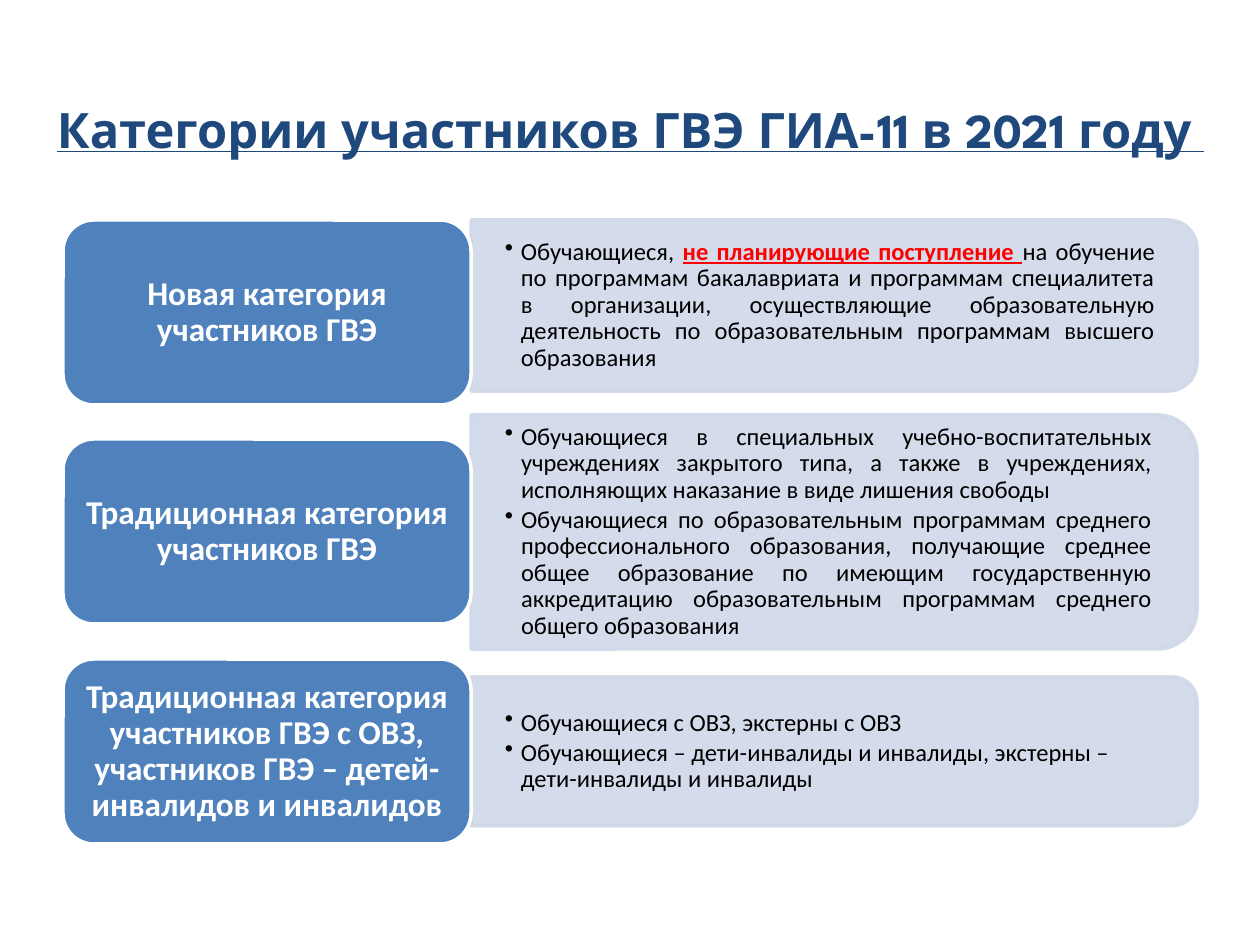
from lxml.etree import SubElement
from pptx import Presentation
from pptx.dml.color import RGBColor
from pptx.enum.shapes import MSO_SHAPE
from pptx.enum.text import MSO_ANCHOR, MSO_AUTO_SIZE, PP_ALIGN
from pptx.oxml.ns import qn
from pptx.util import Emu, Pt

NAVY = RGBColor(0x1F, 0x49, 0x7D)
BLUE = RGBColor(0x4F, 0x81, 0xBD)
PALE = RGBColor(0xD0, 0xD8, 0xE8)
WHITE = RGBColor(0xFF, 0xFF, 0xFF)
BLACK = RGBColor(0x00, 0x00, 0x00)
RED = RGBColor(0xFF, 0x00, 0x00)

TITLE_FONT = {"name": "League Spartan", "size": Pt(27.9), "underline": True}
LABEL_FONT = {"name": "Calibri", "size": Pt(19), "bold": True}
PLAIN = {"name": "Calibri", "size": Pt(14), "bold": False}
STRONG = PLAIN | {"bold": True, "underline": True}

LABEL_LEFT, LABEL_TOP, LABEL_WIDTH, LABEL_HEIGHT = 63, 220, 408, 185
TWO_ROW_PITCH = 439
PANEL_LEFT, PANEL_WIDTH = 471, 726

CATEGORIES = [
    ("Новая категория участников ГВЭ", 220, 171, PP_ALIGN.JUSTIFY, [
        [("Обучающиеся, ", PLAIN, BLACK),
         ("не планирующие поступление ", STRONG, RED),
         ("на обучение по программам бакалавриата и программам специалитета в организации, "
          "осуществляющие образовательную деятельность по образовательным программам "
          "высшего образования", PLAIN, BLACK)],
    ]),
    ("Традиционная категория участников ГВЭ", 415, 234, PP_ALIGN.JUSTIFY, [
        [("Обучающиеся в специальных учебно-воспитательных учреждениях закрытого типа, "
          "а также в учреждениях, исполняющих наказание в виде лишения свободы", PLAIN, BLACK)],
        [("Обучающиеся по образовательным программам среднего профессионального образования, "
          "получающие среднее общее образование по имеющим государственную аккредитацию "
          "образовательным программам среднего общего образования", PLAIN, BLACK)],
    ]),
    ("Традиционная категория участников ГВЭ с ОВЗ, участников ГВЭ – детей-инвалидов и инвалидов",
     677, 149, PP_ALIGN.LEFT, [
         [("Обучающиеся с ОВЗ, экстерны с ОВЗ", PLAIN, BLACK)],
         [("Обучающиеся – дети-инвалиды и инвалиды, экстерны – дети-инвалиды и инвалиды",
           PLAIN, BLACK)],
     ]),
]


def px(length):
    """Turn pixels into EMU."""
    return Emu(round(length * 914400 / 126))


def set_values(target, values):
    """Set attributes of an object from a dict."""
    for name, value in values.items():
        setattr(target, name, value)


def set_frame(text_frame, horizontal, vertical, anchor=MSO_ANCHOR.MIDDLE):
    """Set the margins, wrapping and anchor of a text frame."""
    set_values(text_frame, {
        "margin_left": px(horizontal), "margin_right": px(horizontal),
        "margin_top": px(vertical), "margin_bottom": px(vertical),
        "word_wrap": True, "auto_size": MSO_AUTO_SIZE.NONE, "vertical_anchor": anchor})


def add_run(paragraph, text, font_values, color):
    """Append a formatted run to a paragraph."""
    run = paragraph.add_run()
    run.text = text
    set_values(run.font, font_values)
    run.font.color.rgb = color


def add_block(slide, kind, box, fill_color, line_color):
    """Add a filled and outlined preset shape without a shadow."""
    shape = slide.shapes.add_shape(kind, *map(px, box))
    shape.shadow.inherit = False
    shape.fill.solid()
    shape.fill.fore_color.rgb = fill_color
    shape.line.color.rgb = line_color
    shape.line.width = Pt(2)
    return shape


def add_title(slide):
    """Place and fill the title placeholder."""
    title = slide.shapes.title
    set_values(title, {"left": px(44), "top": px(37), "width": px(1191), "height": px(110)})
    set_frame(title.text_frame, 13, 6, MSO_ANCHOR.TOP)
    title.text_frame.margin_top = px(63)
    paragraph = title.text_frame.paragraphs[0]
    paragraph.alignment = PP_ALIGN.LEFT
    heading = "Категории участников ГВЭ ГИА-11 в 2021 году"
    add_run(paragraph, heading, TITLE_FONT | {"bold": True}, NAVY)
    add_run(paragraph, " ", TITLE_FONT | {"bold": False}, NAVY)


def add_panel(slide, top, height):
    """Add a translucent panel turned so that its right corners are round."""
    left = PANEL_LEFT + (PANEL_WIDTH - height) / 2
    box = (left, top + (height - PANEL_WIDTH) / 2, height, PANEL_WIDTH)
    panel = add_block(slide, MSO_SHAPE.ROUND_2_SAME_RECTANGLE, box, PALE, PALE)
    panel.rotation = 90
    for color in panel._element.spPr.iter(qn("a:srgbClr")):
        SubElement(color, qn("a:alpha"), val="90000")


def add_bullets(slide, top, height, alignment, items):
    """Add the bulleted list inside a panel."""
    inset = height // 20
    box = (PANEL_LEFT, top + inset, PANEL_WIDTH - inset, height - 2 * inset)
    text_frame = slide.shapes.add_textbox(*map(px, box)).text_frame
    set_frame(text_frame, 34, 17)
    for index, runs in enumerate(items):
        paragraph = text_frame.add_paragraph() if index else text_frame.paragraphs[0]
        set_values(paragraph, {"alignment": alignment, "level": 1,
                               "line_spacing": 0.9, "space_after": Pt(2)})
        properties = paragraph._p.get_or_add_pPr()
        properties.set("marL", str(px(16)))
        properties.set("indent", str(-px(16)))
        SubElement(properties, qn("a:buChar"), char="•")
        for text, font_values, color in runs:
            add_run(paragraph, text, font_values, color)


def add_label(slide, top, text):
    """Add the rounded category label."""
    box = (LABEL_LEFT, top, LABEL_WIDTH, LABEL_HEIGHT)
    label = add_block(slide, MSO_SHAPE.ROUNDED_RECTANGLE, box, BLUE, WHITE)
    set_frame(label.text_frame, 10, 5)
    paragraph = label.text_frame.paragraphs[0]
    set_values(paragraph, {"alignment": PP_ALIGN.CENTER, "line_spacing": 0.9})
    add_run(paragraph, text, LABEL_FONT, WHITE)


def main():
    """Build and save the slide."""
    presentation = Presentation()
    set_values(presentation, {"slide_width": px(1260), "slide_height": px(945)})
    slide = presentation.slides.add_slide(presentation.slide_layouts[5])
    add_title(slide)
    for row, (text, top, height, alignment, items) in enumerate(CATEGORIES):
        add_panel(slide, top, height)
        add_bullets(slide, top, height, alignment, items)
        add_label(slide, LABEL_TOP + row * TWO_ROW_PITCH // 2, text)
    presentation.save("out.pptx")


if __name__ == "__main__":
    main()
